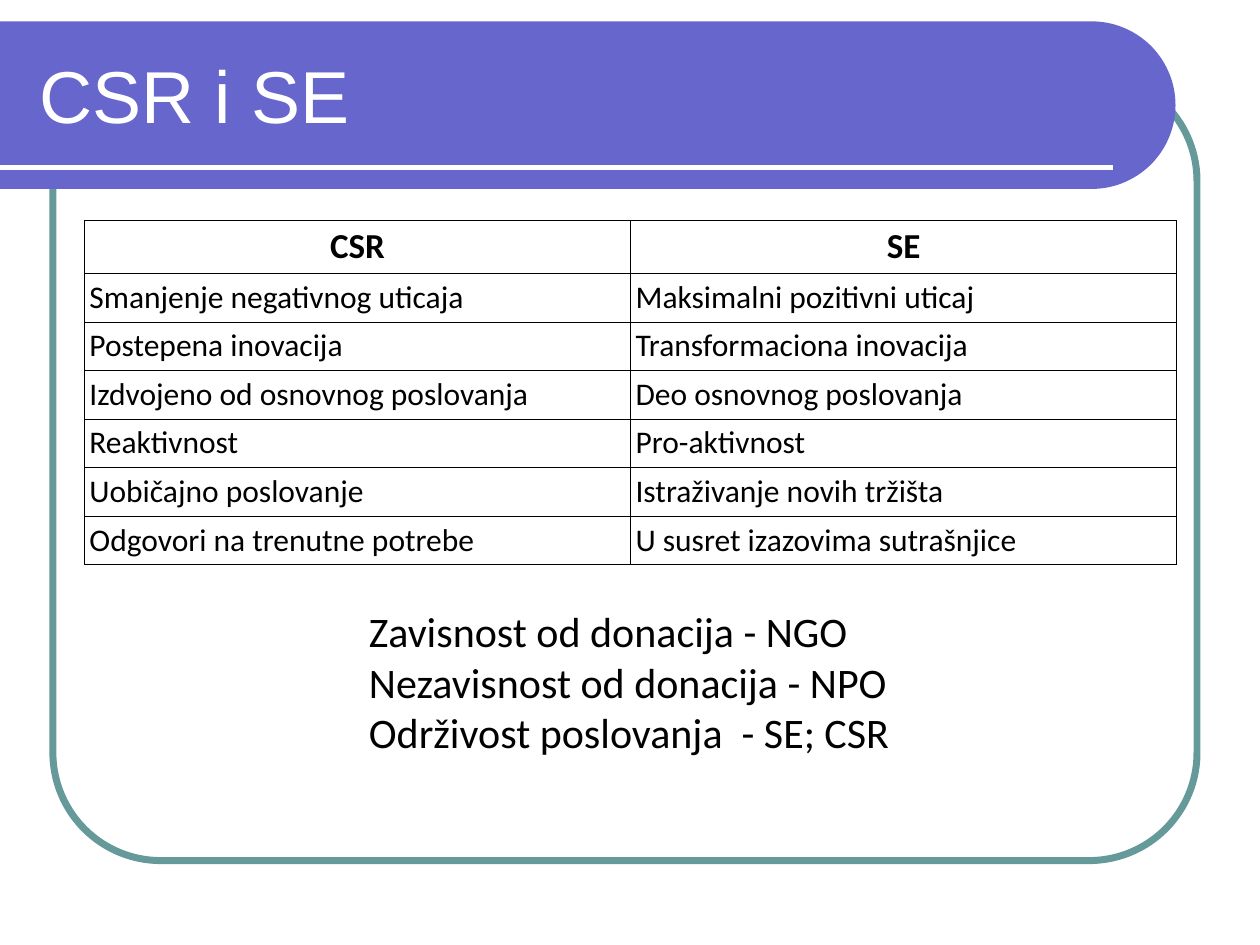
import math

from lxml import etree
from pptx import Presentation
from pptx.dml.color import RGBColor
from pptx.enum.shapes import MSO_CONNECTOR, MSO_SHAPE
from pptx.enum.text import MSO_ANCHOR, MSO_AUTO_SIZE, PP_ALIGN
from pptx.oxml import parse_xml
from pptx.oxml.ns import nsdecls, qn
from pptx.util import Inches, Pt

ROUNDED = MSO_SHAPE.ROUNDED_RECTANGLE
STRAIGHT = MSO_CONNECTOR.STRAIGHT
LEFT, CENTER = PP_ALIGN.LEFT, PP_ALIGN.CENTER
MIDDLE = MSO_ANCHOR.MIDDLE
NO_AUTOFIT = MSO_AUTO_SIZE.NONE

TEAL = RGBColor(0x66, 0x99, 0x99)
VIOLET = RGBColor(0x66, 0x66, 0xCC)
WHITE = RGBColor(0xFF, 0xFF, 0xFF)
BLACK = RGBColor(0, 0, 0)

COMPARISON = [
    ("CSR", "SE"),
    ("Smanjenje negativnog uticaja", "Maksimalni pozitivni uticaj"),
    ("Postepena inovacija", "Transformaciona inovacija"),
    ("Izdvojeno od osnovnog poslovanja", "Deo osnovnog poslovanja"),
    ("Reaktivnost", "Pro-aktivnost"),
    ("Uobičajno poslovanje", "Istraživanje novih tržišta"),
    ("Odgovori na trenutne potrebe", "U susret izazovima sutrašnjice"),
]
CONCLUSIONS = [
    "Zavisnost od donacija - NGO",
    "Nezavisnost od donacija - NPO",
    "Održivost poslovanja  - SE; CSR",
]


def write_text(frame, lines, size, font="Calibri", color=BLACK, bold=False, align=LEFT):
    for index, line in enumerate(lines):
        paragraph = frame.add_paragraph() if index else frame.paragraphs[0]
        paragraph.alignment = align
        run = paragraph.add_run()
        run.text = line
        run.font.size = Pt(size)
        run.font.name = font
        run.font.bold = bold
        run.font.color.rgb = color


def add_frame(slide):
    frame = slide.shapes.add_shape(
        ROUNDED, Inches(0.42), Inches(0.58), Inches(9.08), Inches(6.25))
    frame.adjustments[0] = 0.137
    frame.shadow.inherit = False
    frame.fill.background()
    frame.line.color.rgb = TEAL
    frame.line.width = Pt(4)


def add_banner(slide, top=0.17, bottom=1.5, right=9.33, steps=60):
    """Draw a band from the left slide edge that ends in a half circle."""
    radius = (bottom - top) / 2
    center_x, center_y = right - radius, top + radius
    angles = [math.pi * (step / steps - 0.5) for step in range(steps + 1)]
    arc = [(center_x + radius * math.cos(a), center_y + radius * math.sin(a))
           for a in angles]
    builder = slide.shapes.build_freeform(0, Inches(top), scale=1.0)
    builder.add_line_segments(
        [(Inches(x), Inches(y)) for x, y in arc + [(0, bottom)]], close=True)
    banner = builder.convert_to_shape()
    banner.shadow.inherit = False
    banner.fill.solid()
    banner.fill.fore_color.rgb = VIOLET
    banner.line.fill.background()


def add_rule(slide):
    rule = slide.shapes.add_connector(
        STRAIGHT, 0, Inches(1.33), Inches(8.83), Inches(1.33))
    rule.line.color.rgb = WHITE
    rule.line.width = Pt(3)
    etree.SubElement(rule._element.spPr, qn("a:effectLst"))


def place_title(slide, text):
    title = slide.shapes.title
    title.left, title.top = Inches(0.21), Inches(0.25)
    title.width, title.height = Inches(8.77), Inches(1)
    title.text_frame.vertical_anchor = MIDDLE
    title.text_frame.auto_size = NO_AUTOFIT
    write_text(title.text_frame, [text], 42, font="Arial", color=WHITE)
    # The title has to lie in front of the banner.
    slide.shapes._spTree.append(title._element)


def set_borders(cell, color=BLACK, width=0.5):
    properties = cell._tc.get_or_add_tcPr()
    for position, side in enumerate(("lnL", "lnR", "lnT", "lnB")):
        properties.insert(position, parse_xml(
            f'<a:{side} {nsdecls("a")} w="{Pt(width)}"><a:solidFill>'
            f'<a:srgbClr val="{color}"/></a:solidFill></a:{side}>'))


def add_comparison(slide, rows):
    row_height = Inches(0.38)
    table = slide.shapes.add_table(
        len(rows), len(rows[0]), Inches(0.67), Inches(1.75),
        Inches(8.67), row_height * len(rows)).table
    table.horz_banding = False
    for row_index, (row, texts) in enumerate(zip(table.rows, rows)):
        row.height = row_height
        header = row_index == 0
        for cell, text in zip(row.cells, texts):
            cell.margin_left = cell.margin_right = Inches(0.04)
            cell.margin_top = cell.margin_bottom = Inches(0.04)
            cell.fill.background()
            set_borders(cell)
            write_text(cell.text_frame, [text], 20 if header else 18,
                       bold=header, align=CENTER if header else LEFT)


def add_conclusions(slide, lines):
    box = slide.shapes.add_textbox(
        Inches(2.83), Inches(4.76), Inches(4.33), Inches(1.6))
    box.text_frame.word_wrap = True
    write_text(box.text_frame, lines, 24)


def main():
    presentation = Presentation()
    presentation.slide_width = Inches(10)
    presentation.slide_height = Inches(7.5)
    slide = presentation.slides.add_slide(presentation.slide_layouts[5])
    add_frame(slide)
    add_banner(slide)
    add_rule(slide)
    place_title(slide, "CSR i SE")
    add_comparison(slide, COMPARISON)
    add_conclusions(slide, CONCLUSIONS)
    presentation.save("out.pptx")


if __name__ == "__main__":
    main()
